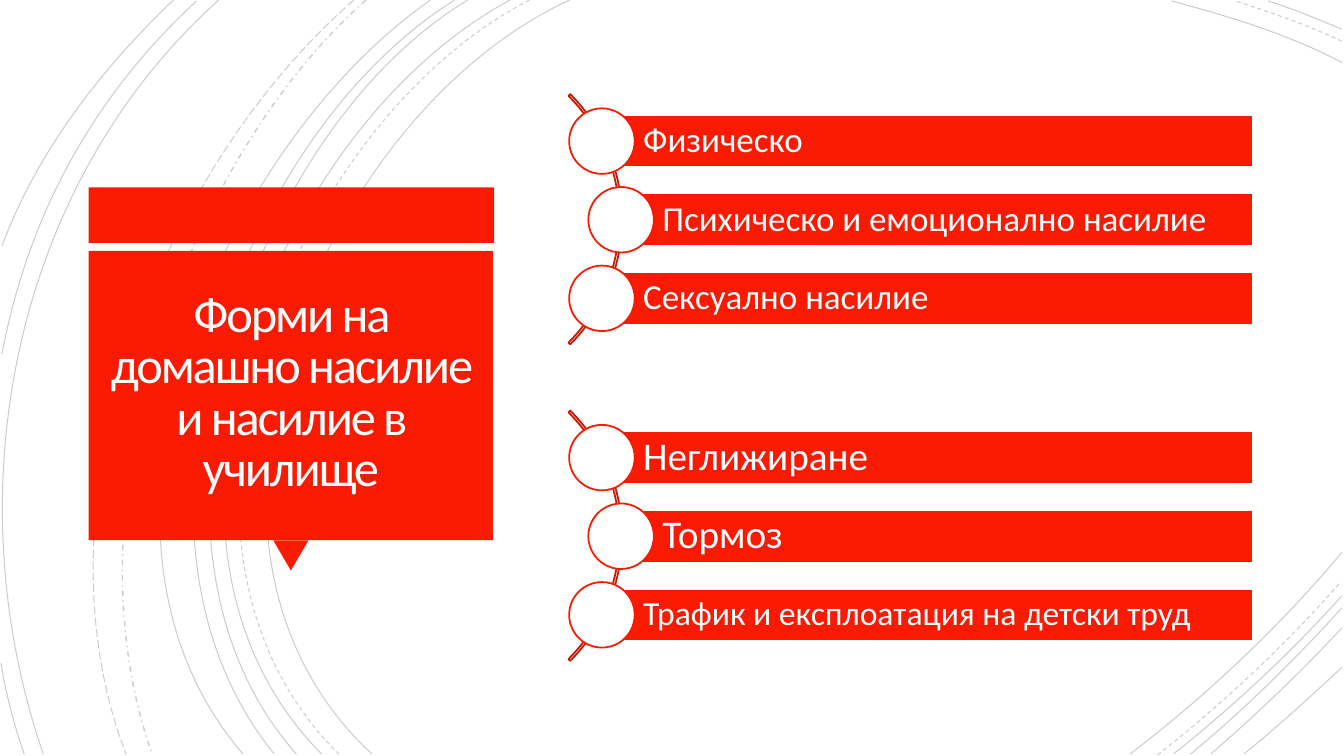
from pptx import Presentation
from pptx.util import Inches, Pt
from pptx.dml.color import RGBColor
from pptx.enum.dml import MSO_LINE
from pptx.enum.shapes import MSO_SHAPE
from pptx.enum.text import MSO_ANCHOR, MSO_AUTO_SIZE, PP_ALIGN
from pptx.oxml.ns import qn
from lxml.etree import SubElement

# Content
TITLE = "Форми на домашно насилие и насилие в училище"
GROUPS = [  # top of first bar, (label, type size)
    (1.14, [("Физическо", 25), ("Психическо и емоционално насилие", 25),
            ("Сексуално насилие", 25)]),
    (4.28, [("Неглижиране", 28), ("Тормоз", 28),
            ("Трафик и експлоатация на детски труд", 24)]),
]

THEME = {"red": "F81B02", "dark": "C71602", "white": "FFFFFF", "text": "FFFEFF",
         "curve": "000000", "font": "Calibri", "title": 36,
         "edge": 1.25, "thin": 0.75}

# Background curves: start, two control points, end
SOLID = [
    [(5.65, 0), (3.15, 1.15), (1.43, 5.4), (3.69, 7.48)],
    [(13.31, 0.62), (12.78, 0.34), (12.18, 0.16), (11.62, 0.01)],
    [(11.21, 7.48), (11.97, 6.9), (12.69, 6.22), (13.31, 5.48)],
    [(5.06, 0), (2.7, 1.27), (1.1, 5.37), (3.19, 7.48)],
    [(13.31, 0.29), (13.07, 0.19), (12.83, 0.09), (12.58, 0.01)],
    [(11.64, 7.48), (12.23, 7.01), (12.8, 6.48), (13.31, 5.91)],
    [(4.64, 0), (2.44, 1.33), (1.1, 5.41), (2.94, 7.48)],
    [(11.81, 7.48), (12.34, 7.04), (12.84, 6.55), (13.31, 6.03)],
    [(4.51, 0), (2.31, 1.38), (0.97, 5.33), (2.72, 7.48)],
    [(12.01, 7.48), (12.46, 7.09), (12.9, 6.67), (13.31, 6.23)],
    [(4.27, 0), (2.17, 1.47), (0.53, 5.29), (2.41, 7.48)],
    [(12.34, 7.48), (12.67, 7.21), (12.99, 6.92), (13.31, 6.62)],
    [(2.17, 0), (0.11, 1.85), (-0.46, 4.9), (0.43, 7.48)],
    [(1.95, 0.01), (0.92, 0.96), (0.28, 2.14), (0.02, 3.51)],
    [(0.01, 6.58), (0.06, 6.89), (0.14, 7.19), (0.24, 7.48)],
    [(1.72, 0), (1, 0.69), (0.37, 1.5), (0.02, 2.44)],
]
DASH = [
    [(5.25, 0), (2.85, 1.25), (1.23, 5.37), (3.36, 7.48)],
    [(13.31, 0.41), (12.97, 0.25), (12.6, 0.12), (12.25, 0.01)],
    [(11.48, 7.49), (12.13, 6.98), (12.75, 6.4), (13.3, 5.77)],
]
DOTTED = [[(3.63, 0), (1.76, 1.66), (0.65, 5.09), (1.51, 7.48)]]
LONG = [[(3.51, 0), (1.57, 1.69), (0.29, 4.99), (1.25, 7.48)]]
CURVES = [(SOLID, None, THEME["thin"]), (DASH, MSO_LINE.DASH, THEME["thin"]),
          (DOTTED, MSO_LINE.DASH_DOT, 1), (LONG, MSO_LINE.LONG_DASH, THEME["thin"])]

# Geometry of the lists
BAR_X, BAR_END, BAR_H, STEP, SHIFT = 5.97, 12.43, 0.52, 0.78, 0.19
DOT, ARC, ARC_X, ARC_UP = 0.65, 3.51, 2.66, 0.72

deck = Presentation()
deck.slide_width, deck.slide_height = Inches(13.33), Inches(7.5)
slide = deck.slides.add_slide(deck.slide_layouts[5])
shapes = slide.shapes


def paint(shape, fill=None, line=None, width=THEME["edge"]):
    shape.shadow.inherit = False
    if fill:
        shape.fill.solid()
        shape.fill.fore_color.rgb = RGBColor.from_string(THEME[fill])
    else:
        shape.fill.background()
    if line:
        shape.line.color.rgb = RGBColor.from_string(THEME[line])
        shape.line.width = Pt(width)
    else:
        shape.line.fill.background()


def add(kind, x, y, w, h, fill=None, line=None):
    shape = shapes.add_shape(kind, *map(Inches, (x, y, w, h)))
    paint(shape, fill, line)
    return shape


def write(shape, text, size, color, align, space, inset):
    frame = shape.text_frame
    frame.text = text
    left, rest = inset
    form = {"word_wrap": True, "auto_size": MSO_AUTO_SIZE.NONE,
            "vertical_anchor": MSO_ANCHOR.MIDDLE, "margin_left": Inches(left),
            "margin_top": Inches(rest), "margin_right": Inches(rest),
            "margin_bottom": Inches(rest)}
    for name, value in form.items():
        setattr(frame, name, value)
    par = frame.paragraphs[0]
    par.alignment, par.line_spacing = align, space
    font = par.runs[0].font
    font.name, font.size = THEME["font"], Pt(size)
    font.color.rgb = RGBColor.from_string(THEME[color])
    return par.runs[0]


def sweep(points):
    """One cubic curve: the three segments become a single Bezier."""
    first, *rest = [tuple(map(Inches, point)) for point in points]
    pen = shapes.build_freeform(*first, scale=1.0)
    pen.add_line_segments(rest, close=False)
    curve = pen.convert_to_shape()
    route = curve.element.find(".//" + qn("a:path"))
    bend = SubElement(route, qn("a:cubicBezTo"))
    for leg in route.findall(qn("a:lnTo")):
        bend.append(leg[0])
        route.remove(leg)
    return curve


# Background curves
for family, dash, width in CURVES:
    for points in family:
        curve = sweep(points)
        paint(curve, line="curve", width=width)
        if dash:
            curve.line.dash_style = dash
        tint = curve.element.find(".//" + qn("a:ln")).find(".//" + qn("a:srgbClr"))
        SubElement(tint, qn("a:alpha"), val="20000")

# Title card
add(MSO_SHAPE.RECTANGLE, 0.88, 1.86, 4.02, 0.55, "red")
tip = add(MSO_SHAPE.ISOSCELES_TRIANGLE, 2.71, 5.36, 0.35, 0.3, "red")
tip.rotation = 180
card = add(MSO_SHAPE.RECTANGLE, 0.88, 2.49, 4.01, 2.87, "red")
title = shapes.title
title.left, title.top, title.width, title.height = map(Inches, (0.97, 2.56, 3.83, 2.7))
run = write(title, TITLE, THEME["title"], "text", PP_ALIGN.CENTER, 0.85, (0.1, 0.1))
run.font._element.set("spc", "-150")
card.element.addnext(title.element)

# Lists: arc, then a bar and a dot per item
for top, items in GROUPS:
    arc = add(MSO_SHAPE.BLOCK_ARC, ARC_X, top - ARC_UP, ARC, ARC, line="dark")
    for i, value in enumerate((189, 27, 0.007)):
        arc.adjustments[i] = value
    for i, (label, size) in enumerate(items):
        x, y = BAR_X + SHIFT * (i % 2), top + STEP * i
        bar = add(MSO_SHAPE.RECTANGLE, x, y, BAR_END - x, BAR_H, "red", "white")
        write(bar, label, size, "white", PP_ALIGN.LEFT, 0.9, (0.41, 0.07))
        add(MSO_SHAPE.OVAL, x - DOT / 2, y + (BAR_H - DOT) / 2, DOT, DOT, "white", "red")

deck.save("out.pptx")
